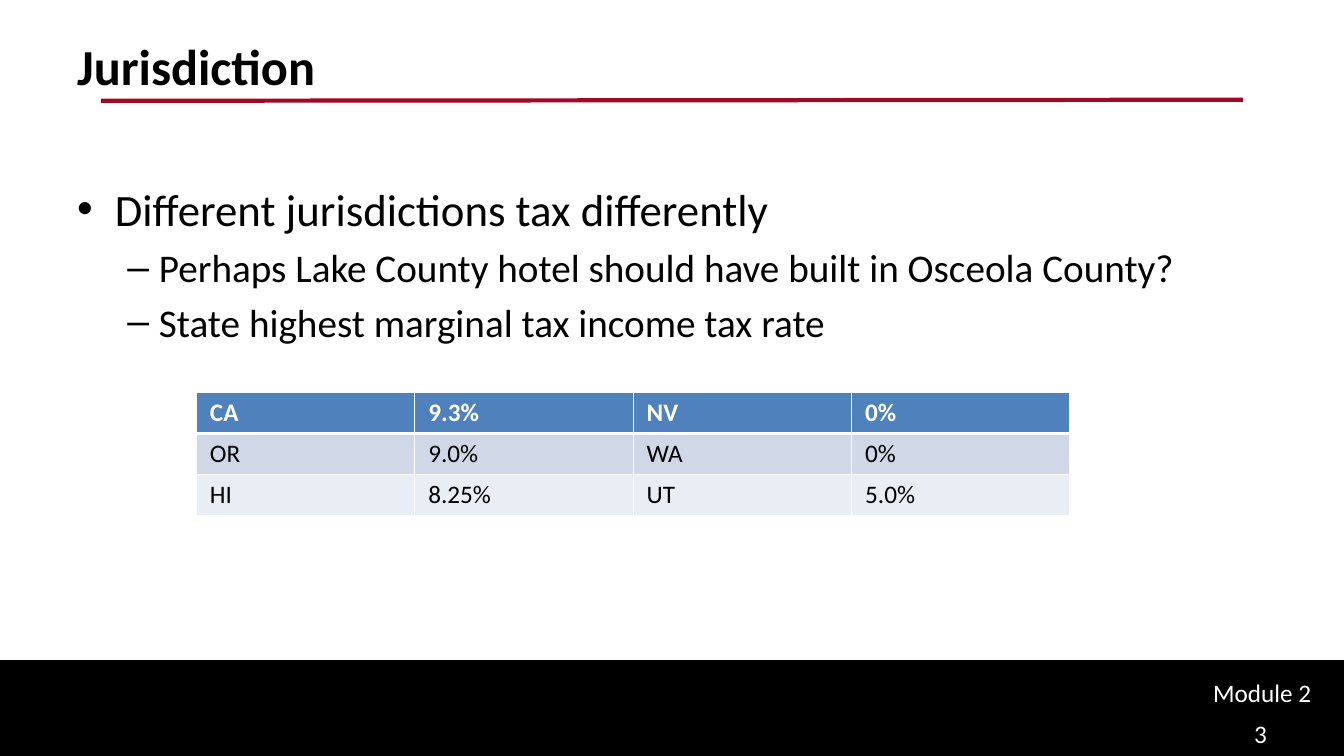
from lxml import etree
from pptx import Presentation
from pptx import util as u
from pptx.dml.color import RGBColor
from pptx.enum import shapes, text
from pptx.oxml import ns

PX = 9525
FONT = "Calibri"
BLACK = RGBColor(0x00, 0x00, 0x00)
WHITE = RGBColor(0xFF, 0xFF, 0xFF)
CRIMSON = RGBColor(0x9E, 0x09, 0x26)
HEADER_BLUE = RGBColor(0x4F, 0x81, 0xBD)
BAND_FILLS = [RGBColor(0xD0, 0xD8, 0xE8), RGBColor(0xE9, 0xED, 0xF4)]

BULLETS = [
    (0, "Different jurisdictions tax differently"),
    (1, "Perhaps Lake County hotel should have built in Osceola County?"),
    (1, "State highest marginal tax income tax rate"),
]
LEVELS = [("•", 36, 36, 32), ("–", 78, 30, 28)]
RATES = [
    ["CA", "9.3%", "NV", "0%"],
    ["OR", "9.0%", "WA", "0%"],
    ["HI", "8.25%", "UT", "5.0%"],
]


def px(*lengths):
    """Turn pixel lengths into EMU."""
    return [u.Emu(n * PX) for n in lengths]


def style(p, size, color, bold=False):
    """Format every run of a paragraph."""
    for r in p.runs:
        r.font.name = FONT
        r.font.size = u.Pt(size)
        r.font.bold = bold
        r.font.color.rgb = color


def add_label(s, box, words, size, color, bold=False):
    """Add a top-anchored text box and return its frame."""
    tf = s.shapes.add_textbox(*px(*box)).text_frame
    tf.word_wrap = True
    tf.vertical_anchor = text.MSO_ANCHOR.TOP
    tf.text = words
    for p in tf.paragraphs:
        style(p, size, color, bold)
    return tf


def add_heading(s, x, y, w, h):
    """Add the title and the crimson rule beneath its first line."""
    add_label(s, (x, y, w, h), "Jurisdiction", 36, BLACK, True)
    rule = s.shapes.add_connector(
        shapes.MSO_CONNECTOR.STRAIGHT,
        *px(x + 32, y + 67, x + w - 32, y + 66))
    rule.line.color.rgb = CRIMSON
    rule.line.width = u.Pt(3)
    etree.SubElement(rule._element.spPr, ns.qn("a:effectLst"))


def add_bullets(s, x, y, w, h):
    """Add the two-level bullet list."""
    words = "\n".join(line for _, line in BULLETS)
    tf = add_label(s, (x, y, w, h), words, 28, BLACK)
    for i, (p, (level, _)) in enumerate(zip(tf.paragraphs, BULLETS)):
        mark, margin, hang, size = LEVELS[level]
        p.level = level
        if i:
            p.space_before = u.Pt(size * 0.2)
        pPr = p._p.get_or_add_pPr()
        pPr.set("marL", str(margin * PX))
        pPr.set("indent", str(-hang * PX))
        etree.SubElement(pPr, ns.qn("a:buFont"), typeface="Arial")
        etree.SubElement(pPr, ns.qn("a:buChar"), char=mark)
        style(p, size, BLACK)


def add_borders(cell, bottom):
    """Draw white borders round a cell, the lower one of the given width."""
    tcPr = cell._tc.get_or_add_tcPr()
    for i, (side, width) in enumerate(zip("LRTB", (1, 1, 1, bottom))):
        ln = etree.Element(ns.qn(f"a:ln{side}"), w=str(u.Pt(width)))
        fill = etree.SubElement(ln, ns.qn("a:solidFill"))
        etree.SubElement(fill, ns.qn("a:srgbClr"), val=str(WHITE))
        tcPr.insert(i, ln)


def add_rates(s, x, y, w, h):
    """Add the table of state tax rates."""
    rows, cols = len(RATES), len(RATES[0])
    table = s.shapes.add_table(rows, cols, *px(x, y, w, h)).table
    for i, row in enumerate(RATES):
        header = i == 0
        for j, words in enumerate(row):
            cell = table.cell(i, j)
            cell.text = words
            cell.margin_left, cell.margin_right = px(13, 13)
            cell.margin_top, cell.margin_bottom = px(5, 5)
            cell.fill.solid()
            cell.fill.fore_color.rgb = HEADER_BLUE if header else BAND_FILLS[(i - 1) % 2]
            add_borders(cell, 3 if header else 1)
            style(cell.text_frame.paragraphs[0], 18, WHITE if header else BLACK, header)


def add_footer(s, x, y, w, h):
    """Add the black band with the module name and page number."""
    sp = s.shapes.add_shape(shapes.MSO_SHAPE.RECTANGLE, *px(x, y, w, h))
    sp.shadow.inherit = False
    sp.fill.solid()
    sp.fill.fore_color.rgb = BLACK
    sp.line.color.rgb = BLACK
    sp.line.width = u.Pt(2)
    add_label(s, (x + w - 134, y + 10, 127, 38), "Module 2", 18, WHITE)
    add_label(s, (x + w - 95, y + 49, 87, 41), "3", 18, WHITE)


def main():
    """Build and save the slide."""
    prs = Presentation()
    prs.slide_width, prs.slide_height = px(1280, 720)
    s = prs.slides.add_slide(prs.slide_layouts[6])
    add_footer(s, 0, 630, 1280, 90)
    add_heading(s, 64, 29, 1152, 120)
    add_bullets(s, 64, 168, 1152, 412)
    add_rates(s, 187, 374, 832, 117)
    prs.save("out.pptx")


if __name__ == "__main__":
    main()
